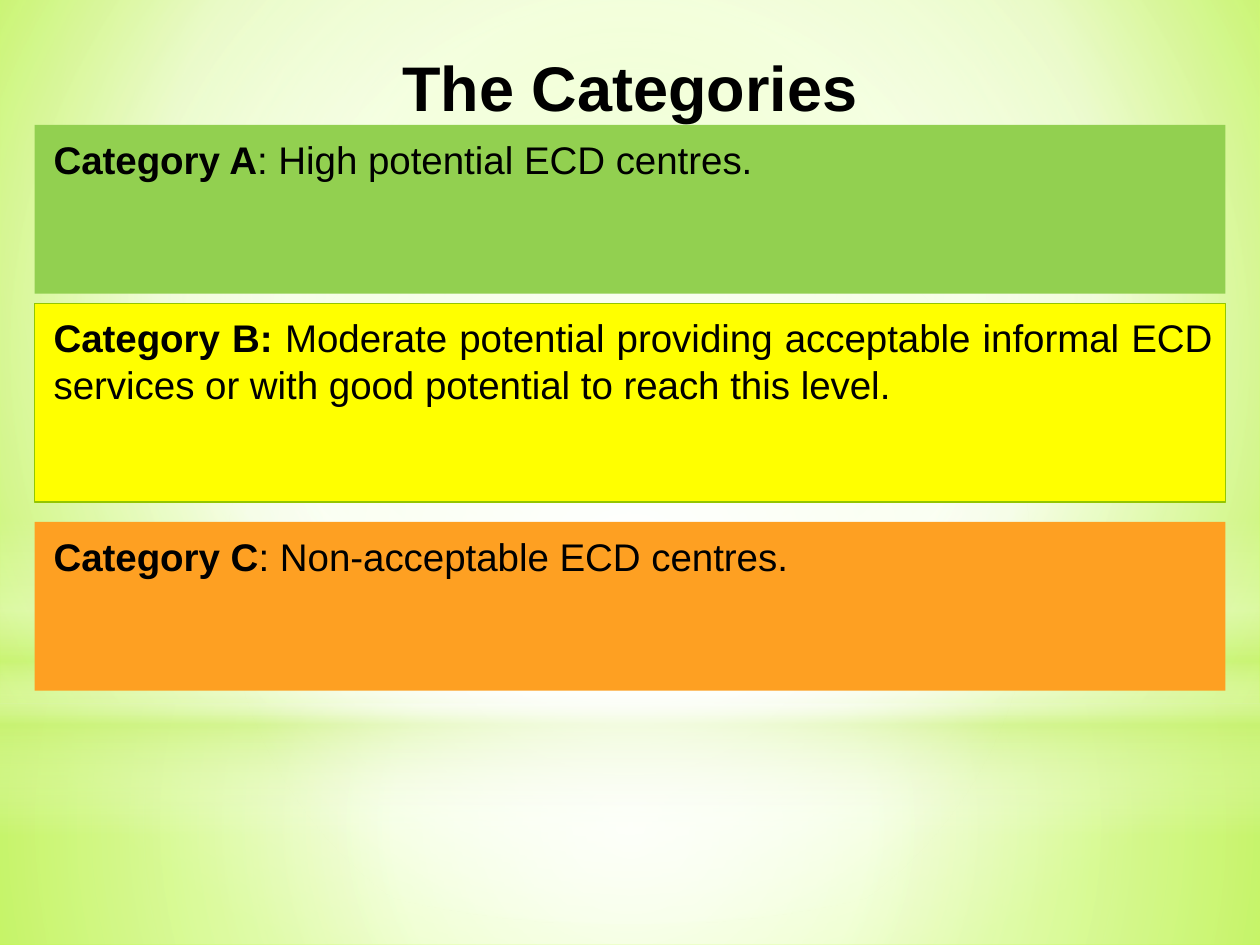
from lxml import etree
from pptx import Presentation
from pptx.dml.color import RGBColor
from pptx.enum.shapes import MSO_SHAPE
from pptx.enum.text import MSO_ANCHOR, PP_ALIGN
from pptx.oxml import parse_xml
from pptx.oxml.ns import nsdecls, qn
from pptx.util import Pt

RECTANGLE, ELLIPSE = MSO_SHAPE.RECTANGLE, MSO_SHAPE.OVAL
TOP, MIDDLE = MSO_ANCHOR.TOP, MSO_ANCHOR.MIDDLE
CENTER, JUSTIFY = PP_ALIGN.CENTER, PP_ALIGN.JUSTIFY

BLACK = RGBColor(0x00, 0x00, 0x00)
WHITE = RGBColor(0xFF, 0xFF, 0xFF)
GREEN = RGBColor(0x92, 0xD0, 0x50)
YELLOW = RGBColor(0xFF, 0xFF, 0x00)
ORANGE = RGBColor(0xFE, 0xA0, 0x22)
OUTLINE = RGBColor(0x94, 0xC6, 0x00)
LIME = RGBColor(0xCA, 0xF2, 0x78)
BRIGHT_LIME = RGBColor(0xCA, 0xFF, 0x60)
PALE_LIME = RGBColor(0xF7, 0xFF, 0xE7)
DEEP_LIME = RGBColor(0xB7, 0xFF, 0x29)

WIDTH, HEIGHT = 720, 540
MARGIN = 19.8
CONTENT_WIDTH = WIDTH - 2 * MARGIN
CENTRED = (50, 50, 50, 50)

GLOWS = [
    (RECTANGLE, 401.8, 138.2, [(0, WHITE, 91), (37, WHITE, 76), (100, LIME, 79)], CENTRED),
    (RECTANGLE, 0, 401.8, [(0, WHITE, 89), (48, WHITE, 62), (100, LIME, 79)], CENTRED),
    (RECTANGLE, 296.6, 180, [(0, WHITE, 0), (29, WHITE, 30), (45, LIME, 40),
                             (55, WHITE, 26), (65, LIME, 60), (100, WHITE, 0)], None),
    (ELLIPSE, 126, 401.8, [(0, WHITE, 100), (56, WHITE, 0)], CENTRED),
]

CATEGORIES = [
    (71.4, 96.5, GREEN, None, "Category A", ": High potential ECD centres."),
    (173.4, 113.4, YELLOW, OUTLINE, "Category B: ",
     "Moderate potential providing acceptable informal ECD services "
     "or with good potential to reach this level."),
    (298.2, 96.5, ORANGE, None, "Category C", ": Non-acceptable ECD centres."),
]


def apply_format(target, values):
    for name, value in values.items():
        setattr(target, name, value)


class SlideBuilder:
    font = {"name": "Arial", "color": BLACK}
    title_frame = {"word_wrap": True, "vertical_anchor": MIDDLE}
    category_frame = {"word_wrap": True, "vertical_anchor": TOP,
                      "margin_left": Pt(10.8), "margin_top": Pt(6.3)}

    def __init__(self, presentation):
        self.slide = presentation.slides.add_slide(presentation.slide_layouts[6])

    def set_gradient(self, properties, stops, focus):
        gradient = parse_xml(f'<a:gradFill {nsdecls("a")} rotWithShape="1"><a:gsLst/></a:gradFill>')
        for position, color, opacity in stops:
            stop = etree.SubElement(gradient[0], qn("a:gs"), pos=str(position * 1000))
            shade = etree.SubElement(stop, qn("a:srgbClr"), val=str(color))
            if opacity < 100:
                etree.SubElement(shade, qn("a:alpha"), val=str(opacity * 1000))
        if focus:
            circle = etree.SubElement(gradient, qn("a:path"), {"path": "circle"})
            edges = {edge: str(value * 1000) for edge, value in zip("ltrb", focus)}
            etree.SubElement(circle, qn("a:fillToRect"), edges)
        else:
            etree.SubElement(gradient, qn("a:lin"), ang="5400000", scaled="0")
        properties.replace(properties.find(qn("a:solidFill")), gradient)

    def background(self, stops, focus):
        self.slide.background.fill.solid()
        self.slide.background.fill.fore_color.rgb = WHITE
        self.set_gradient(self.slide.element.find(f'.//{qn("p:bgPr")}'), stops, focus)

    def shape(self, kind, left, top, width, height, fill, outline=None):
        shape = self.slide.shapes.add_shape(kind, Pt(left), Pt(top), Pt(width), Pt(height))
        shape.shadow.inherit = False
        shape.fill.solid()
        shape.fill.fore_color.rgb = fill
        if outline:
            shape.line.color.rgb = outline
            shape.line.width = Pt(0.75)
        else:
            shape.line.fill.background()
        return shape

    def glow(self, kind, top, height, stops, focus):
        shape = self.shape(kind, 0, top, WIDTH, height, WHITE)
        self.set_gradient(shape.element.spPr, stops, focus)

    def add_text(self, shape, frame_format, alignment, size, runs):
        frame = shape.text_frame
        apply_format(frame, frame_format)
        paragraph = frame.paragraphs[0]
        paragraph.alignment = alignment
        for text, bold in runs:
            run = paragraph.add_run()
            run.text = text
            apply_format(run.font, {"name": self.font["name"], "size": Pt(size), "bold": bold})
            run.font.color.rgb = self.font["color"]

    def title(self, text):
        box = self.slide.shapes.add_textbox(Pt(MARGIN), Pt(20.9), Pt(CONTENT_WIDTH), Pt(56.9))
        self.add_text(box, self.title_frame, CENTER, 36, [(text, True)])

    def category(self, top, height, fill, outline, label, description):
        box = self.shape(RECTANGLE, MARGIN, top, CONTENT_WIDTH, height, fill, outline)
        self.add_text(box, self.category_frame, JUSTIFY, 22, [(label, True), (description, False)])


def main():
    presentation = Presentation()
    apply_format(presentation, {"slide_width": Pt(WIDTH), "slide_height": Pt(HEIGHT)})
    builder = SlideBuilder(presentation)
    builder.background([(0, BRIGHT_LIME, 100), (60, PALE_LIME, 100), (100, DEEP_LIME, 100)],
                       (20, 10, 20, 60))
    for glow in GLOWS:
        builder.glow(*glow)
    builder.title("The Categories")
    for category in CATEGORIES:
        builder.category(*category)
    presentation.save("out.pptx")


if __name__ == "__main__":
    main()
